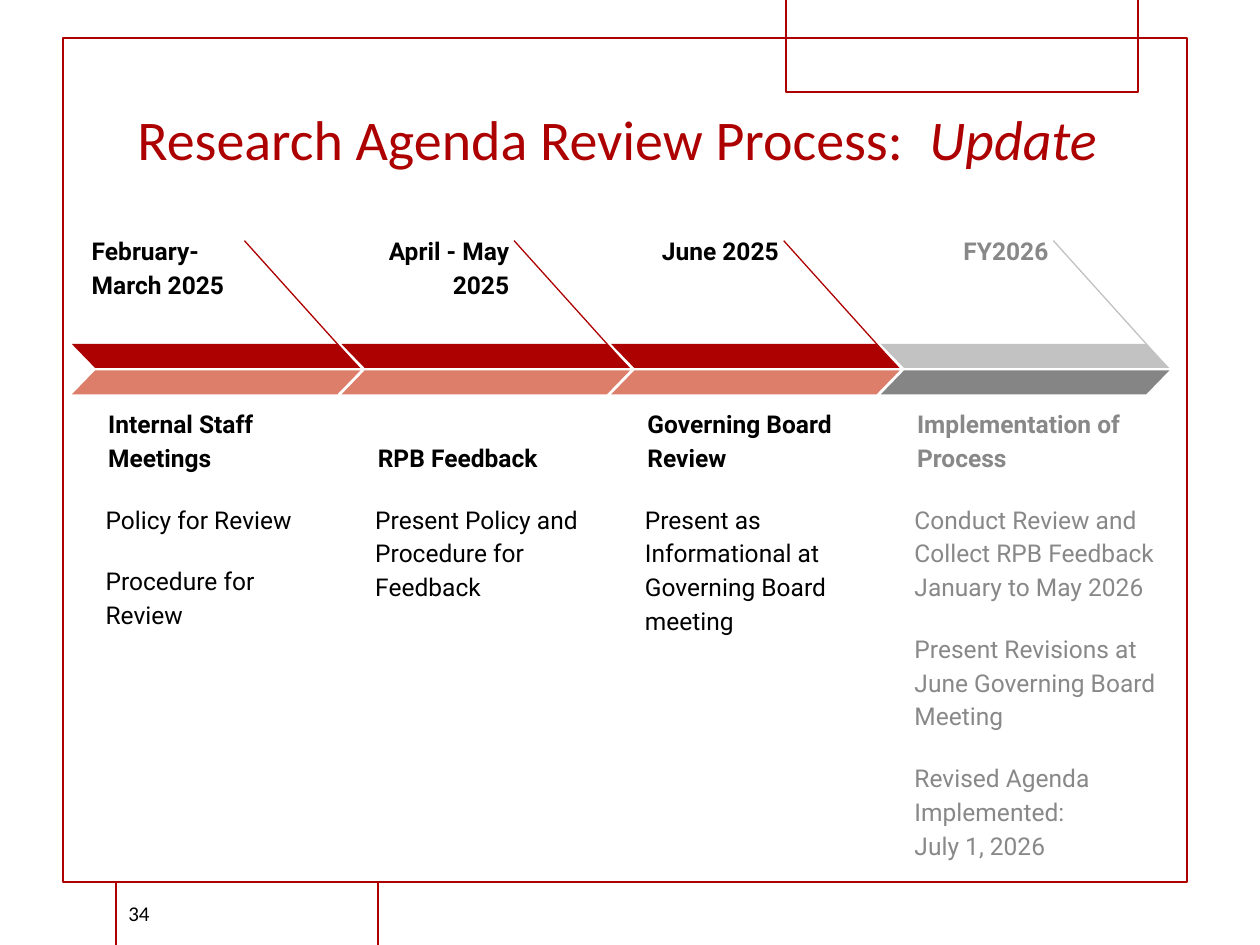
from pptx import Presentation
from pptx.dml.color import RGBColor
from pptx.enum.shapes import MSO_CONNECTOR, MSO_SHAPE
from pptx.enum.text import MSO_ANCHOR, MSO_AUTO_SIZE, PP_ALIGN
from pptx.oxml.ns import qn
from pptx.util import Inches, Pt
from lxml import etree

RED, SALMON, BLACK = "AD0101", "DD7E6B", "000000"
LIGHT, MID, GREY = "C2C2C2", "858585", "888888"


def rgb(value):
    return RGBColor.from_string(value)


def add_text(x, y, w, h, paragraphs, color, bold=False, anchor=MSO_ANCHOR.TOP,
             align=PP_ALIGN.LEFT):
    tf = slide.shapes.add_textbox(Inches(x), Inches(y), Inches(w), Inches(h)).text_frame
    tf.word_wrap = True
    tf.vertical_anchor = anchor
    tf.margin_left = tf.margin_right = tf.margin_top = tf.margin_bottom = Inches(0.1)
    for i, text in enumerate(paragraphs):
        p = tf.paragraphs[0] if i == 0 else tf.add_paragraph()
        p.text = text
        p.alignment = align
        p.line_spacing = 1.15
        p.space_before = Pt(16 if i else 0)
        p.font.name, p.font.size, p.font.bold = "Roboto", Pt(14), bold
        p.font.color.rgb = rgb(color)
    return tf


prs = Presentation()
prs.slide_width, prs.slide_height = Inches(10), Inches(7.5)
slide = prs.slides.add_slide(prs.slide_layouts[5])

# Frame with its bottom and top tabs
for x, y, w, h, filled in [(0.5, 0.3, 8.92, 6.7, True),
                           (0.92, 7, 2.08, 0.51, True),
                           (6.24, -0.01, 2.79, 0.74, False)]:
    s = slide.shapes.add_shape(MSO_SHAPE.RECTANGLE, Inches(x), Inches(y), Inches(w), Inches(h))
    s.shadow.inherit = False
    if filled:
        s.fill.solid()
        s.fill.fore_color.rgb = rgb("FFFFFF")
    else:
        s.fill.background()
    s.line.color.rgb = rgb(RED)
    s.line.width = Pt(1.25)

# Title, brought in front of the frame
title = slide.shapes.title
slide.shapes._spTree.append(title._element)
title.left, title.top, title.width, title.height = (
    Inches(0.99), Inches(0.48), Inches(8.02), Inches(0.93))
tf = title.text_frame
tf.auto_size = MSO_AUTO_SIZE.NONE
tf.vertical_anchor = MSO_ANCHOR.BOTTOM
p = tf.paragraphs[0]
p.alignment = PP_ALIGN.LEFT
p.font.name, p.font.size = "Calibri", Pt(32)
p.font.color.rgb = rgb(RED)
p.add_run().text = "Research Agenda Review Process:  "
r = p.add_run()
r.text = "Update"
r.font.italic = True

# Slide number
tf = add_text(0.92, 7.05, 0.71, 0.4, ["34"], BLACK, anchor=MSO_ANCHOR.MIDDLE)
tf.margin_top = tf.margin_bottom = Inches(0.05)
p = tf.paragraphs[0]
p.line_spacing = 1.0
p.font.name, p.font.size = "Calibri", Pt(12)

# Timeline: date, heading, details
phases = [
    ("February- March 2025", "Internal Staff Meetings",
     ["Policy for Review", "Procedure for Review"]),
    ("April - May 2025", "RPB Feedback",
     ["Present Policy and Procedure for Feedback"]),
    ("June 2025", "Governing Board Review",
     ["Present as Informational at Governing Board meeting"]),
    ("FY2026", "Implementation of Process",
     ["Conduct Review and Collect RPB Feedback January to May 2026",
      "Present Revisions at June Governing Board Meeting",
      "Revised Agenda Implemented:\vJuly 1, 2026"]),
]
for i, (date, heading, details) in enumerate(phases):
    x = 0.57 + 2.14 * i
    future = i == len(phases) - 1
    text_color = GREY if future else BLACK
    upper, lower = (LIGHT, MID) if future else (RED, SALMON)

    if i == 0:
        add_text(x + 0.06, 1.74, 1.37, 0.99, [date], text_color, bold=True)
    else:
        add_text(x, 1.74, 1.43, 0.74, [date], text_color, bold=True, align=PP_ALIGN.RIGHT)
    add_text(x + 0.19, 3.25, 1.88, 0.6, [heading], text_color, bold=True,
             anchor=MSO_ANCHOR.BOTTOM)
    add_text(x + 0.17, 3.87, 2.13 if future else 1.93, 3.3 if future else 0.99,
             details, text_color)

    line = slide.shapes.add_connector(MSO_CONNECTOR.STRAIGHT, Inches(x + 1.37), Inches(1.91),
                                      Inches(x + 2.27), Inches(2.91))
    line.line.color.rgb = rgb(upper)
    line.line.width = Pt(0.75)
    etree.SubElement(line._element.spPr, qn("a:effectLst"))

    for y, color, flipped in [(2.73, upper, True), (2.94, lower, False)]:
        s = slide.shapes.add_shape(MSO_SHAPE.PARALLELOGRAM, Inches(x), Inches(y),
                                   Inches(2.29), Inches(0.19))
        s.adjustments[0] = 0.97
        s.shadow.inherit = False
        s.fill.solid()
        s.fill.fore_color.rgb = rgb(color)
        s.line.fill.background()
        if flipped:
            s._element.spPr.find(qn("a:xfrm")).set("flipH", "1")

prs.save("out.pptx")
